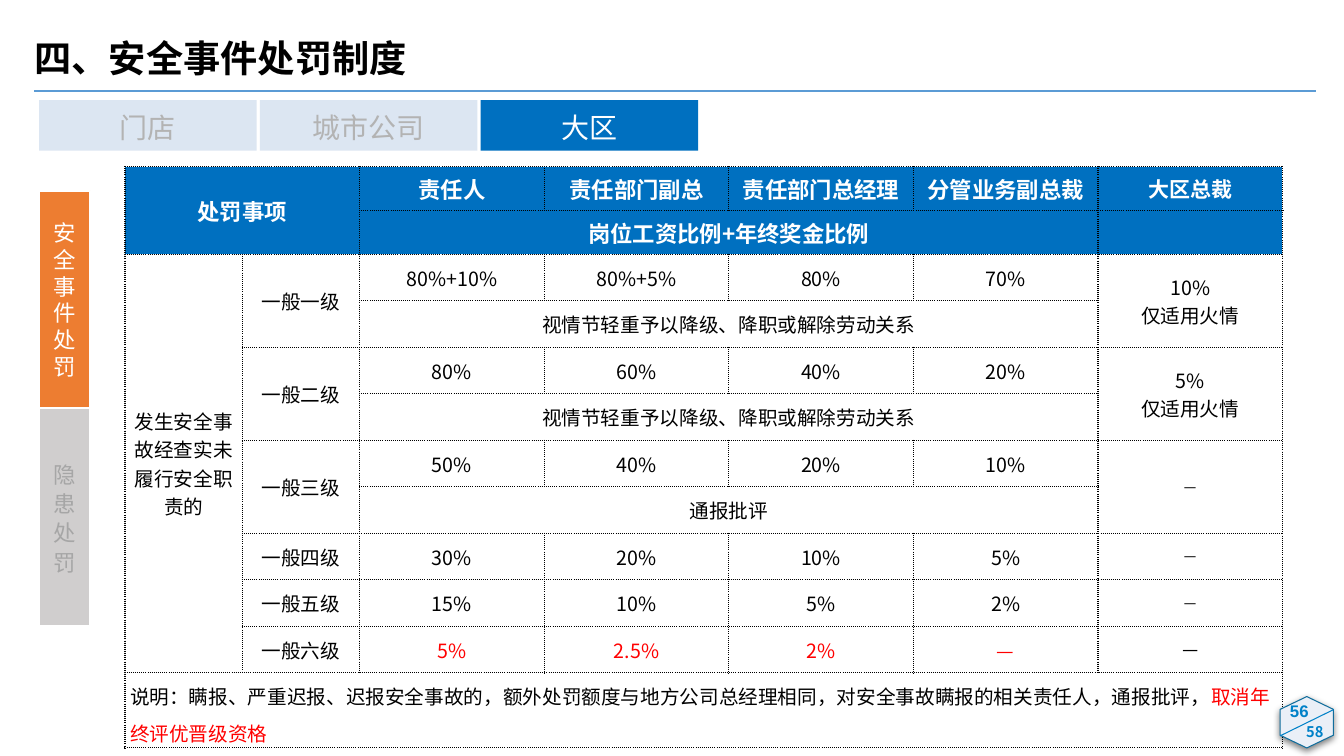
import pptx
import pptx.util
import pptx.dml.color
import pptx.enum.shapes
import pptx.enum.text
import pptx.oxml
import pptx.oxml.ns

Pt = pptx.util.Pt
SHAPE = pptx.enum.shapes.MSO_SHAPE
MIDDLE = pptx.enum.text.MSO_ANCHOR.MIDDLE
CENTER = pptx.enum.text.PP_ALIGN.CENTER
LEFT = pptx.enum.text.PP_ALIGN.LEFT
NO_FIT = pptx.enum.text.MSO_AUTO_SIZE.NONE
CJK = "Noto Sans CJK SC"
BLUE, WHITE, BLACK, RED, BADGE_BLUE = "0070C0", "FFFFFF", "000000", "FF0000", "0081C8"
NAMESPACE = 'xmlns:a="http://schemas.openxmlformats.org/drawingml/2006/main"'

HEADERS = ["责任人", "责任部门副总", "责任部门总经理", "分管业务副总裁", "大区总裁"]
DEMOTION = "视情节轻重予以降级、降职或解除劳动关系"
# Level, rates for the four roles, shared extra penalty, regional president
LEVELS = [
    ("一般一级", ["80%+10%", "80%+5%", "80%", "70%"], DEMOTION, ["10%", "仅适用火情"]),
    ("一般二级", ["80%", "60%", "40%", "20%"], DEMOTION, ["5%", "仅适用火情"]),
    ("一般三级", ["50%", "40%", "20%", "10%"], "通报批评", ["—"]),
    ("一般四级", ["30%", "20%", "10%", "5%"], None, ["—"]),
    ("一般五级", ["15%", "10%", "5%", "2%"], None, ["—"]),
    ("一般六级", ["5%", "2.5%", "2%", "—"], None, ["—"]),
]
NOTE = "说明：瞒报、严重迟报、迟报安全事故的，额外处罚额度与地方公司总经理相同，对安全事故瞒报的相关责任人，通报批评，"


def color(value):
    return pptx.dml.color.RGBColor.from_string(value)


def paint(target, value):
    target.fill.solid()
    target.fill.fore_color.rgb = color(value)


def add_run(para, text, size, ink, bold=False, font=CJK):
    span = para.add_run()
    span.text = text
    span.font.name = font
    span.font.size = Pt(size)
    span.font.bold = bold
    span.font.color.rgb = color(ink)
    east = pptx.oxml.parse_xml(f'<a:ea {NAMESPACE} typeface="{font}"/>')
    span.font._element.find(pptx.oxml.ns.qn("a:latin")).addnext(east)


def add_line(page, start, end, ink, width):
    line = page.shapes.add_connector(
        pptx.enum.shapes.MSO_CONNECTOR.STRAIGHT, *map(Pt, start + end))
    line.line.color.rgb = color(ink)
    line.line.width = Pt(width)
    line._element.spPr.append(pptx.oxml.parse_xml(f"<a:effectLst {NAMESPACE}/>"))


def add_block(page, box, fill, outline=None, preset=SHAPE.RECTANGLE, width=1.5):
    block = page.shapes.add_shape(preset, *map(Pt, box))
    block.shadow.inherit = False
    paint(block, fill)
    if outline:
        block.line.color.rgb = color(outline)
        block.line.width = Pt(width)
    else:
        block.line.fill.background()
    return block


def add_label(block, text, size, ink, spacing):
    frame = block.text_frame
    frame.word_wrap = True
    frame.vertical_anchor = MIDDLE
    para = frame.paragraphs[0]
    para.alignment = CENTER
    para.line_spacing = spacing
    add_run(para, text, size, ink)


def build_title(page, box):
    title = page.shapes.title
    title.left, title.top, title.width, title.height = map(Pt, box)
    frame = title.text_frame
    frame.margin_left = frame.margin_right = frame.margin_top = frame.margin_bottom = 0
    frame.auto_size = NO_FIT
    frame.vertical_anchor = MIDDLE
    para = frame.paragraphs[0]
    para.alignment = LEFT
    para.line_spacing = 1.5
    add_run(para, "四、安全事件处罚制度", 26.6, BLACK, True)
    left, top = box[:2]
    add_line(page, (left, top + 46.3), (left + 915.4, top + 46.3), "5B9BD5", 1.5)


def build_tabs(page, box):
    left, top, width, height = box
    gap = 2.2
    tab_width = (width - 2 * gap) / 3
    for index, name in enumerate(["门店", "城市公司", "大区"]):
        active = name == "大区"
        place = (left + index * (tab_width + gap), top, tab_width, height)
        tab = add_block(page, place, BLUE if active else "DCE6F2")
        add_label(tab, name, 20, WHITE if active else "B3B3B3", 1.1)


def build_side_menu(page, box):
    left, top, width, height = box
    items = [("安全事件处罚", "ED7D31", WHITE, 19.2), ("隐患处罚", "D0CECE", "A6A6A6", 21)]
    for index, (name, fill, ink, pitch) in enumerate(items):
        place = (left, top + index * height / 2, width, height / 2)
        item = add_block(page, place, fill, WHITE)
        add_label(item, name, 16, ink, Pt(pitch))


def style_cell(cell, fill, side_margin):
    cell.margin_left = cell.margin_right = Pt(side_margin)
    cell.margin_top = cell.margin_bottom = 0
    cell.vertical_anchor = MIDDLE
    paint(cell, fill)
    properties = cell._tc.get_or_add_tcPr()
    for index, side in enumerate("LRTB"):
        properties.insert(index, pptx.oxml.parse_xml(
            f'<a:ln{side} {NAMESPACE} w="12700"><a:solidFill><a:srgbClr val="{BLACK}"/>'
            f'</a:solidFill><a:prstDash val="sysDot"/></a:ln{side}>'))


def write_cell(cell, lines, size=14, ink=BLACK, bold=False, font=CJK):
    frame = cell.text_frame
    for index, line in enumerate(lines):
        para = frame.add_paragraph() if index else frame.paragraphs[0]
        para.alignment = CENTER
        add_run(para, line, size, ink, bold, font)


def build_penalty_table(page, box):
    heights = [31.3] * 2 + [33.25] * 9 + [44.6]
    widths = [83.8] * 2 + [131.85] * 5
    table = page.shapes.add_table(len(heights), len(widths), *map(Pt, box)).table
    table.first_row = table.horz_banding = False
    for row, height in zip(table.rows, heights):
        row.height = Pt(height)
    for column, width in zip(table.columns, widths):
        column.width = Pt(width)
    for row in range(len(heights)):
        for column in range(len(widths)):
            style_cell(table.cell(row, column), BLUE if row < 2 else WHITE,
                       0 if column else 3.6)

    # Header
    table.cell(0, 0).merge(table.cell(1, 1))
    table.cell(1, 2).merge(table.cell(1, 5))
    write_cell(table.cell(0, 0), ["处罚事项"], 16, WHITE, True)
    for column, name in enumerate(HEADERS, 2):
        write_cell(table.cell(0, column), [name], 15 if column == 6 else 16, WHITE, True)
    write_cell(table.cell(1, 2), ["岗位工资比例+年终奖金比例"], 16, WHITE, True)

    # Levels
    table.cell(2, 0).merge(table.cell(10, 0))
    write_cell(table.cell(2, 0), ["发生安全事故经查实未履行安全职责的"])
    row = 2
    for level, rates, extra, president in LEVELS:
        last = level == "一般六级"
        if extra:
            table.cell(row, 1).merge(table.cell(row + 1, 1))
            table.cell(row, 6).merge(table.cell(row + 1, 6))
            table.cell(row + 1, 2).merge(table.cell(row + 1, 5))
            write_cell(table.cell(row + 1, 2), [extra])
        write_cell(table.cell(row, 1), [level])
        for column, rate in enumerate(rates, 2):
            write_cell(table.cell(row, column), [rate], ink=RED if last else BLACK)
        dash = president == ["—"]
        write_cell(table.cell(row, 6), president, 11 if dash and not last else 14,
                   font="Calibri" if dash else CJK)
        row += 2 if extra else 1

    # Note
    table.cell(11, 0).merge(table.cell(11, 6))
    para = table.cell(11, 0).text_frame.paragraphs[0]
    para.line_spacing = 1.3
    add_run(para, NOTE, 14, BLACK)
    add_run(para, "取消年终评优晋级资格", 14, RED)


def build_page_badge(page, box):
    left, top, width, height = box
    badge = add_block(page, box, "EAEFF7", "106D9C", SHAPE.HEXAGON, 0.75)
    badge.rotation = 270
    effects = badge._element.spPr.find(pptx.oxml.ns.qn("a:effectLst"))
    effects.append(pptx.oxml.parse_xml(
        f'<a:outerShdw {NAMESPACE} blurRad="63500" dist="25400" dir="5400000">'
        f'<a:srgbClr val="{BLACK}"><a:alpha val="50000"/></a:srgbClr></a:outerShdw>'))
    add_line(page, (left - 0.7, top + 28.8), (left + 37.4, top + 10.1), BADGE_BLUE, 0.75)
    numbers = [("56", (left - 11.5, top - 3.6, 49, 28.8), 12, "Arial", CENTER),
               ("58", (left + 10.8, top + 15.8, 30.2, 20.2), 10.5, CJK, LEFT)]
    for number, place, size, font, alignment in numbers:
        label = page.shapes.add_textbox(*map(Pt, place))
        label.text_frame.word_wrap = True
        label.text_frame.vertical_anchor = MIDDLE
        para = label.text_frame.paragraphs[0]
        para.alignment = alignment
        add_run(para, number, size, BADGE_BLUE, True, font)


def main():
    deck = pptx.Presentation()
    deck.slide_width, deck.slide_height = Pt(960), Pt(540)
    page = deck.slides.add_slide(deck.slide_layouts[5])
    build_penalty_table(page, (89.3, 119, 826.85, 406.45))
    build_tabs(page, (27.9, 71.6, 470.8, 36))
    build_title(page, (24.5, 18.7, 507.6, 28.8))
    build_side_menu(page, (28, 136.3, 36.4, 310.6))
    build_page_badge(page, (915.1, 496.8, 36.7, 38.2))
    deck.save("out.pptx")


if __name__ == "__main__":
    main()
